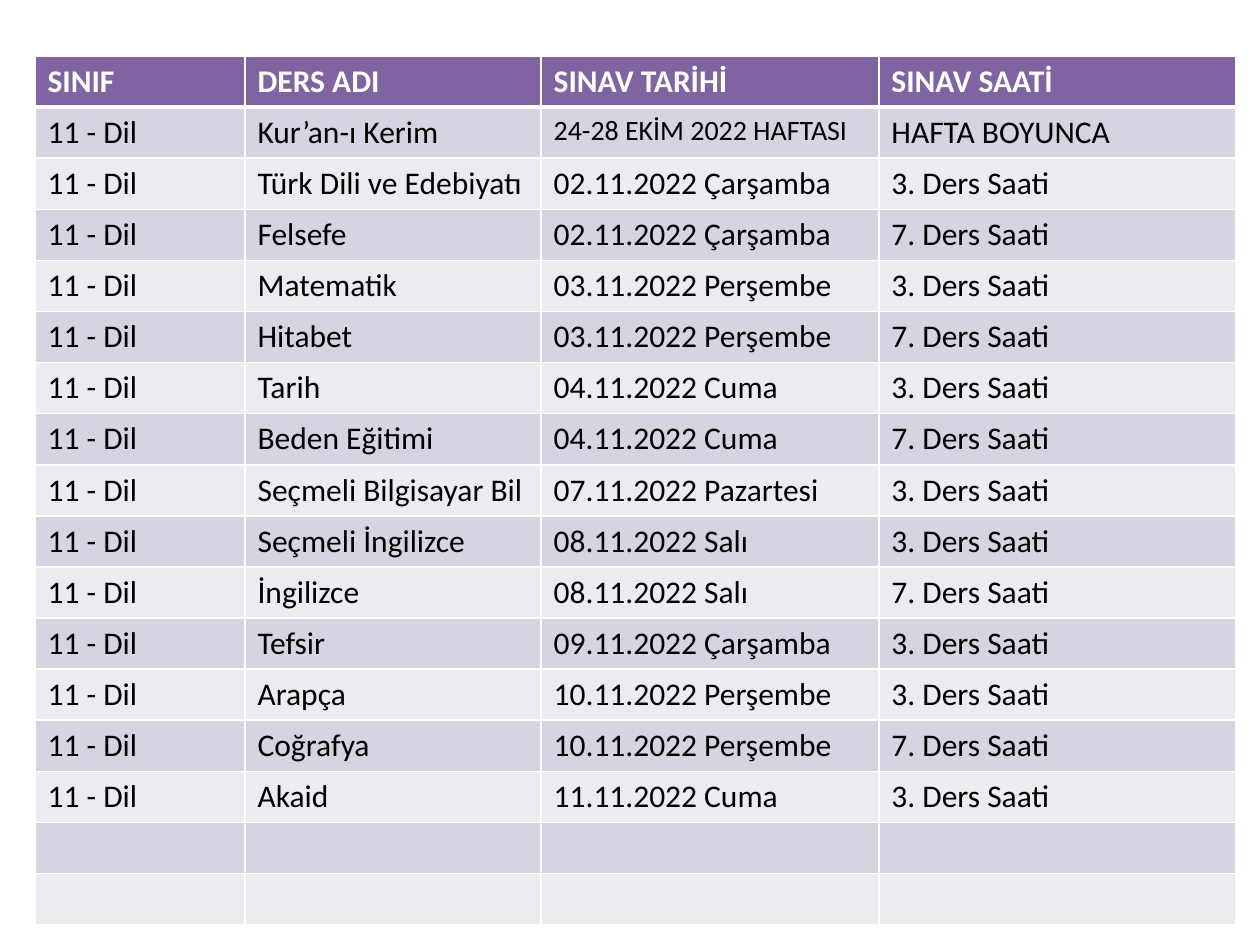
import pptx
import pptx.dml.color
import pptx.oxml
import pptx.oxml.ns
import pptx.util
from dataclasses import dataclass

Pt = pptx.util.Pt
RGB = pptx.dml.color.RGBColor.from_string


@dataclass(frozen=True)
class Theme:
    font: str = "Calibri"
    size: int = 18
    small_size: int = 16
    header_fill: str = "8064A2"
    odd_fill: str = "D8D3E0"
    even_fill: str = "EDEAF0"
    header_text: str = "FFFFFF"
    text: str = "000000"
    border: str = "FFFFFF"


theme = Theme()

HEADERS = ("SINIF", "DERS ADI", "SINAV TARİHİ", "SINAV SAATİ")
CLASS_NAME = "11 - Dil"
EXAM_WEEK = "24-28 EKİM 2022 HAFTASI"
THIRD, SEVENTH = "3. Ders Saati", "7. Ders Saati"
EXAMS = [
    ("Kur’an-ı Kerim", EXAM_WEEK, "HAFTA BOYUNCA"),
    ("Türk Dili ve Edebiyatı", "02.11.2022 Çarşamba", THIRD),
    ("Felsefe", "02.11.2022 Çarşamba", SEVENTH),
    ("Matematik", "03.11.2022 Perşembe", THIRD),
    ("Hitabet", "03.11.2022 Perşembe", SEVENTH),
    ("Tarih", "04.11.2022 Cuma", THIRD),
    ("Beden Eğitimi", "04.11.2022 Cuma", SEVENTH),
    ("Seçmeli Bilgisayar Bil", "07.11.2022 Pazartesi", THIRD),
    ("Seçmeli İngilizce", "08.11.2022 Salı", THIRD),
    ("İngilizce", "08.11.2022 Salı", SEVENTH),
    ("Tefsir", "09.11.2022 Çarşamba", THIRD),
    ("Arapça", "10.11.2022 Perşembe", THIRD),
    ("Coğrafya", "10.11.2022 Perşembe", SEVENTH),
    ("Akaid", "11.11.2022 Cuma", THIRD),
]
EMPTY_ROWS = 2
COLUMN_WIDTHS = (120, 169.2, 193, 203.8)
ROW_HEIGHT = 29.18


def set_border(cell, side, width):
    """Draw one side (L, R, T or B) of a cell; call before setting its fill."""
    cell._tc.get_or_add_tcPr().append(pptx.oxml.parse_xml(
        f'<a:ln{side} {pptx.oxml.ns.nsdecls("a")} w="{Pt(width)}">'
        f'<a:solidFill><a:srgbClr val="{theme.border}"/></a:solidFill>'
        f'</a:ln{side}>'))


prs = pptx.Presentation()
prs.slide_width, prs.slide_height = Pt(720), Pt(540)
slide = prs.slides.add_slide(prs.slide_layouts[6])

rows = [HEADERS]
rows += [(CLASS_NAME, *exam) for exam in EXAMS]
rows += [("",) * len(HEADERS)] * EMPTY_ROWS

table = slide.shapes.add_table(
    len(rows), len(HEADERS), Pt(20), Pt(32),
    Pt(sum(COLUMN_WIDTHS)), Pt(ROW_HEIGHT * len(rows))).table
for column, width in zip(table.columns, COLUMN_WIDTHS):
    column.width = Pt(width)

for i, values in enumerate(rows):
    table.rows[i].height = Pt(ROW_HEIGHT)
    is_header = i == 0
    if is_header:
        fill = theme.header_fill
    else:
        fill = theme.odd_fill if i % 2 else theme.even_fill

    for j, value in enumerate(values):
        cell = table.cell(i, j)
        set_border(cell, "L", 1)
        set_border(cell, "R", 1)
        set_border(cell, "T", 3 if i == 1 else 1)
        set_border(cell, "B", 3 if is_header else 1)
        cell.fill.solid()
        cell.fill.fore_color.rgb = RGB(fill)

        if value:
            r = cell.text_frame.paragraphs[0].add_run()
            r.text = value
            r.font.name = theme.font
            r.font.size = Pt(theme.small_size if value == EXAM_WEEK else theme.size)
            r.font.bold = is_header
            r.font.color.rgb = RGB(theme.header_text if is_header else theme.text)

prs.save("out.pptx")
